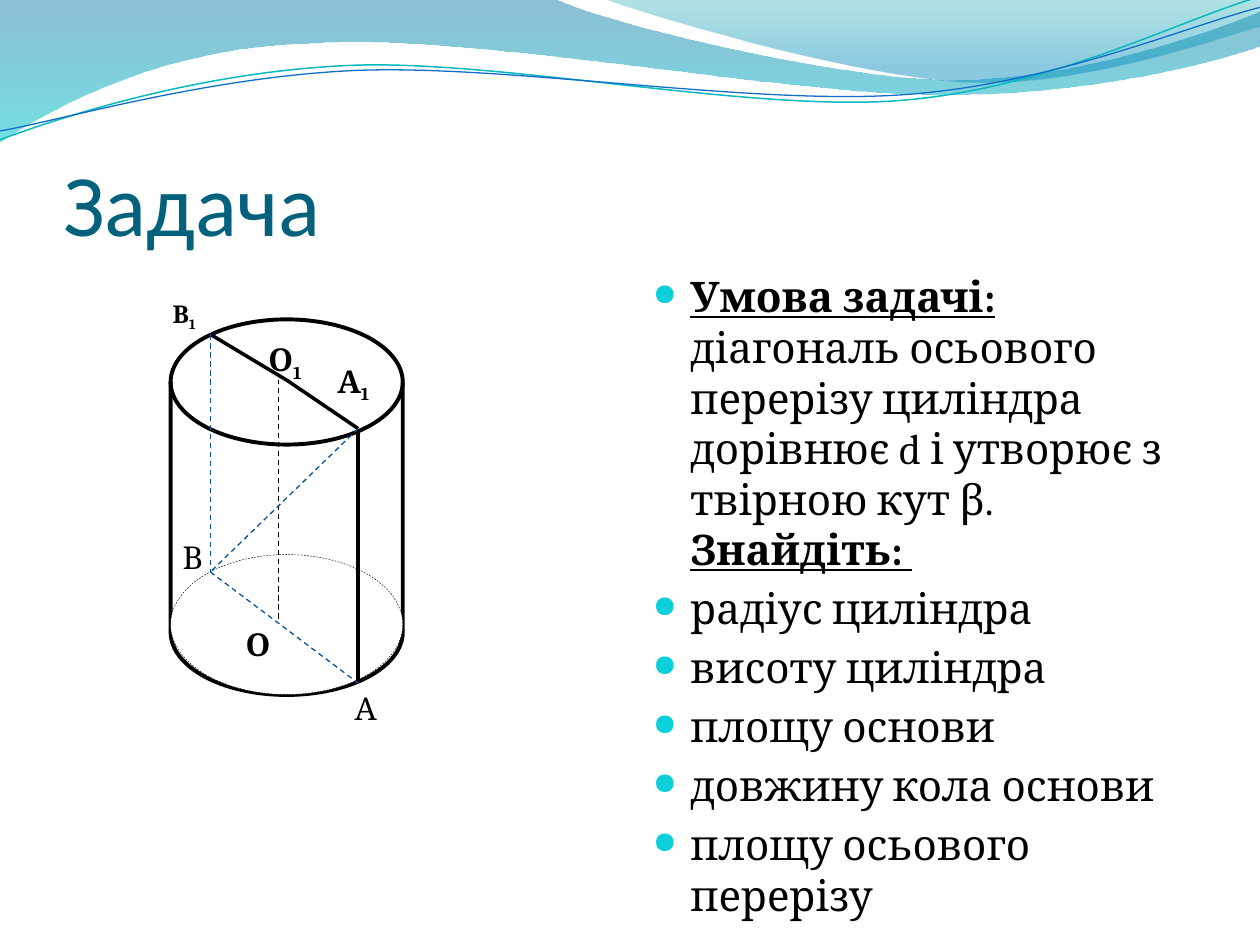
from pptx import Presentation
from pptx.dml.color import RGBColor
from pptx.enum.dml import MSO_LINE
from pptx.enum.shapes import MSO_CONNECTOR, MSO_SHAPE
from pptx.enum.text import MSO_ANCHOR, PP_ALIGN
from pptx.oxml.ns import qn
from pptx.util import Cm, Pt
from lxml import etree

DASH = MSO_LINE.DASH
STRAIGHT = MSO_CONNECTOR.STRAIGHT
DISK, OVAL, RECT = MSO_SHAPE.FLOWCHART_MAGNETIC_DISK, MSO_SHAPE.OVAL, MSO_SHAPE.RECTANGLE
TOP, BOTTOM = MSO_ANCHOR.TOP, MSO_ANCHOR.BOTTOM
LEFT = PP_ALIGN.LEFT

THEME = dict(
    head_font="Calibri", body_font="Cambria",
    title="04617B", ink="000000", paper="FFFFFF", bullet="0BD0D9", hidden="095295",
    title_size=50, body_size=24.1, label_size=18, small_size=14, bullet_pct=72,
)

# Content: a paragraph is a list of (text, style); "h" bold underlined, "b" bold, "s" bold subscript
TITLE = [[("Задача", "")]]
TASK = [
    [("Умова задачі: ", "h"),
     ("діагональ осьового перерізу циліндра дорівнює d і утворює з твірною кут β. ", ""),
     ("Знайдіть: ", "h")],
] + [[(goal, "")] for goal in (
    "радіус циліндра", "висоту циліндра", "площу основи",
    "довжину кола основи", "площу осьового перерізу")]

# Header waves in cm: a pair is a corner, six numbers are a Bézier curve
BANDS = [
    ([(0, 0), (11.18, -0.03), (12.09, 0.43, 16.87, 1.6, 19.25, 1.6),
      (21.67, 1.6, 24.33, 0.66, 25.4, 0.23), (25.43, 0.91),
      (24.97, 1.12, 22.1, 1.93, 18.95, 1.91), (15.8, 1.91, 9.7, 0.71, 6.53, 0.86),
      (3.28, 0.91, 1.17, 2.11, -0.03, 2.87)],
     [(0, "0074A1", 45), (1, "00C6CF", 55)]),
    ([(12.17, -0.03), (12.93, 0.28, 17.32, 1.57, 19.53, 1.65),
      (21.74, 1.75, 24.41, 0.81, 25.4, 0.53), (25.4, 0)],
     [(0, "00A1A9", 30), (0.8, "008BBF", 45)]),
]
WAVES = [
    ([(0, 2.82), (1.22, 2.36, 4.01, 1.45, 7.04, 1.32),
      (10.03, 1.19, 15.06, 2.26, 18.11, 2.03),
      (21.16, 1.8, 23.83, 0.38, 25.35, -0.05)], "0AB8BF", 0.85),
    ([(0, 2.64), (1.19, 2.44, 4.17, 1.55, 7.19, 1.42),
      (10.24, 1.3, 15.16, 2.13, 18.21, 1.91),
      (21.23, 1.7, 23.9, 0.53, 25.4, 0.15)], "0F6FC6", 0.75),
]

# Cylinder: points of the axial section in cm
A, A1 = (7.22, 13.77), (7.22, 8.64)
B, B1 = (4.24, 11.53), (4.24, 6.74)
O, O_TOP, O1 = (5.61, 12.47), (5.61, 7.67), (5.79, 7.67)
EDGES = [  # from, to, colour, width, dashed
    (O, O_TOP, "ink", 0.75, True),
    (O1, A1, "ink", 2, False), (A1, A, "ink", 2, False), (O1, B1, "ink", 2, False),
    (B1, B, "hidden", 0.75, True), (A1, B, "hidden", 0.75, True), (B, A, "hidden", 0.75, True),
]
LABELS = [  # runs, box
    ([("А", "b"), ("1", "s")], (6.55, 7.16, 1.68, 1.02)),
    ([("А", "")], (6.9, 13.77, 1.22, 1.02)),
    ([("В", "")], (3.43, 10.72, 0.79, 1.02)),
    ([("О", "b"), ("1", "s")], (5.16, 6.73, 2.36, 1.8)),
    ([("О", "b")], (4.7, 12.47, 1.09, 1.02)),
]
SMALL_LABEL = ([("В", "b"), ("1", "s")], (3.23, 5.8, 1.02, 0.91))


def rgb(name):
    return RGBColor.from_string(THEME.get(name, name))


def outline(line, color, width, dashed=False):
    line.color.rgb = rgb(color)
    line.width = Pt(width)
    if dashed:
        line.dash_style = DASH


def trace(shapes, steps, closed):
    """Freeform through the step ends, its curved steps turned into Bézier segments."""
    ends = [(Cm(step[-2]), Cm(step[-1])) for step in steps]
    fb = shapes.build_freeform(*ends[0])
    fb.add_line_segments(ends[1:], close=closed)
    s = fb.convert_to_shape()
    s.shadow.inherit = False
    for step, seg in zip(steps[1:], list(s._element.iter(qn("a:lnTo")))):
        if len(step) == 6:
            seg.tag = qn("a:cubicBezTo")
            for i in (0, 2):
                pt = etree.Element(qn("a:pt"), x=str(Cm(step[i]) - s.left),
                                   y=str(Cm(step[i + 1]) - s.top))
                seg.insert(i // 2, pt)
    return s


def add_preset(shapes, kind, box):
    s = shapes.add_shape(kind, *map(Cm, box))
    s.shadow.inherit = False
    s.fill.solid()
    s.fill.fore_color.rgb = rgb("paper")
    s.line.fill.background()
    return s


def add_bullet(p):
    ppr = p._p.get_or_add_pPr()
    ppr.set("marL", str(Cm(0.76)))
    ppr.set("indent", str(-Cm(0.76)))
    color = etree.SubElement(ppr, qn("a:buClr"))
    etree.SubElement(color, qn("a:srgbClr"), val=THEME["bullet"])
    etree.SubElement(ppr, qn("a:buSzPct"), val=str(THEME["bullet_pct"] * 1000))
    etree.SubElement(ppr, qn("a:buChar"), char="●")


def write(s, paragraphs, size="label_size", font="body_font", color="ink", anchor=TOP,
          wrap=False, insets=(0.25, 0.13, 0.25, 0.13), bullets=False,
          spacing=None, before=None, after=None):
    tf = s.text_frame
    tf.word_wrap, tf.vertical_anchor = wrap, anchor
    tf.margin_left, tf.margin_top, tf.margin_right, tf.margin_bottom = map(Cm, insets)
    for i, runs in enumerate(paragraphs):
        p = tf.add_paragraph() if i else tf.paragraphs[0]
        p.alignment = LEFT
        p.line_spacing = spacing
        p.space_before, p.space_after = before, after
        if bullets:
            add_bullet(p)
        for text, style in runs:
            r = p.add_run()
            r.text = text
            f = r.font
            f.name, f.size, f.color.rgb = THEME[font], Pt(THEME[size]), rgb(color)
            f.bold, f.underline = style != "", style == "h"
            if style == "s":
                r._r.get_or_add_rPr().set("baseline", "-25000")


def main():
    prs = Presentation()
    prs.slide_width, prs.slide_height = Cm(25.4), Cm(19.05)
    shapes = prs.slides.add_slide(prs.slide_layouts[6]).shapes

    # Header waves
    for steps, stops in BANDS:
        s = trace(shapes, steps, True)
        s.line.fill.background()
        s.fill.gradient()
        s.fill.gradient_angle = 270
        for stop, (pos, color, _) in zip(s.fill.gradient_stops, stops):
            stop.position, stop.color.rgb = pos, rgb(color)
        for clr, (_, _, alpha) in zip(s._element.spPr.iter(qn("a:srgbClr")), stops):
            etree.SubElement(clr, qn("a:alpha"), val=str(alpha * 1000))
    for steps, color, width in WAVES:
        s = trace(shapes, steps, False)
        s.fill.background()
        outline(s.line, color, width)

    # Title and task
    write(shapes.add_textbox(*map(Cm, (1.28, 1.94, 22.86, 3.18))), TITLE, size="title_size",
          font="head_font", color="title", anchor=BOTTOM, wrap=True, insets=(0, 0.13, 0, 0))
    write(shapes.add_textbox(*map(Cm, (12.91, 5.33, 11.23, 12.32))), TASK, size="body_size",
          wrap=True, bullets=True, before=Pt(4.8))

    # Cylinder with its base
    outline(add_preset(shapes, DISK, (3.44, 6.44, 4.68, 7.57)).line, "ink", 2.25)
    outline(add_preset(shapes, OVAL, (3.44, 11.18, 4.68, 2.82)).line, "ink", 0.25, True)

    # Axis, section and diagonal
    for start, end, color, width, dashed in EDGES:
        s = shapes.add_connector(STRAIGHT, *map(Cm, start + end))
        outline(s.line, color, width, dashed)
        etree.SubElement(s._element.spPr, qn("a:effectLst"))

    # Point labels
    for runs, box in LABELS:
        write(shapes.add_textbox(*map(Cm, box)), [runs])
    runs, box = SMALL_LABEL
    write(add_preset(shapes, RECT, box), [runs], size="small_size", spacing=1.15, after=Pt(10))

    prs.save("out.pptx")


if __name__ == "__main__":
    main()
